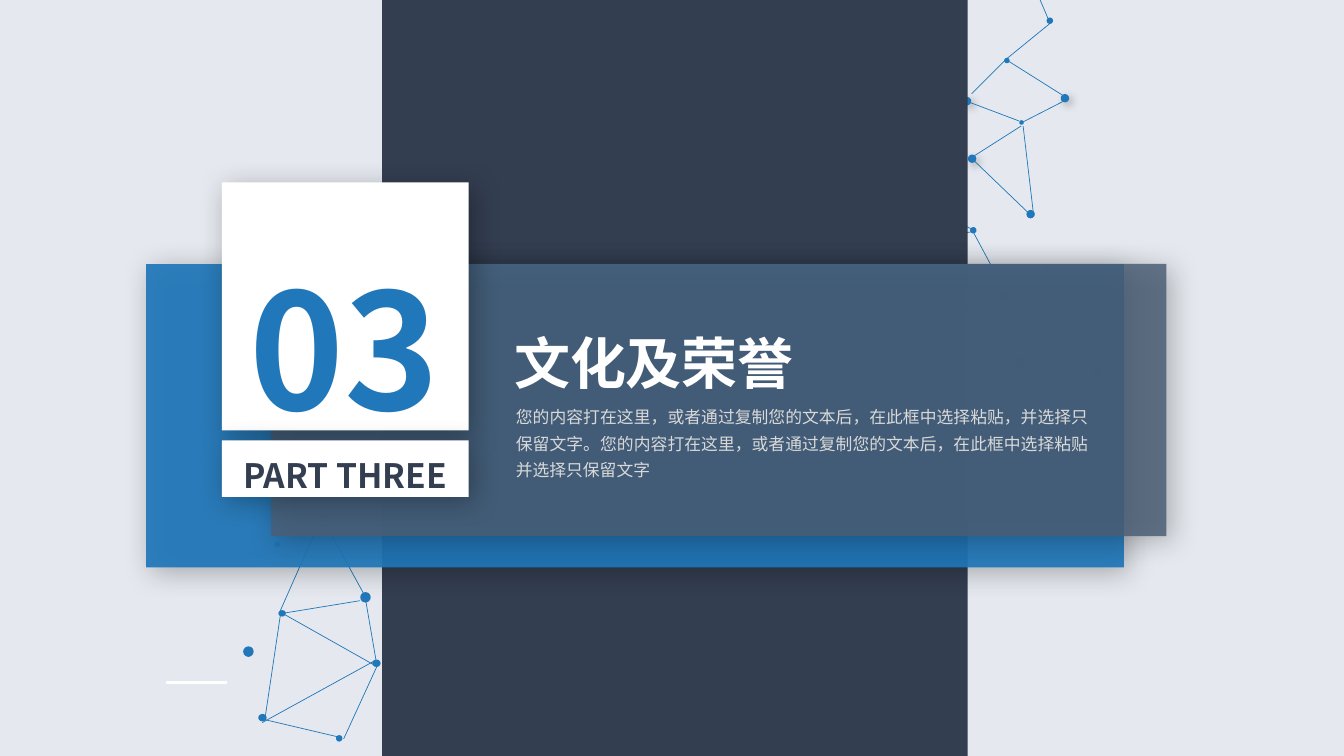
from dataclasses import dataclass

from lxml import etree
from pptx import Presentation
from pptx import util as u
from pptx.dml.color import RGBColor
from pptx.enum import shapes, text
from pptx.oxml.ns import qn


@dataclass
class Theme:
    back: str = "E5E9EF"
    blue: str = "2077B9"
    navy: str = "333E51"
    slate: str = "4B5E75"
    white: str = "FFFFFF"
    pale: str = "D9D9D9"
    font: str = "Noto Sans CJK SC"
    narrow: str = "Arial Narrow"
    huge: int = 115
    head: int = 40
    label: int = 24
    body: int = 12


def write(shape, words, size, color, font=None, bold=False,
          align=text.PP_ALIGN.LEFT, anchor=text.MSO_ANCHOR.TOP,
          fit=text.MSO_AUTO_SIZE.SHAPE_TO_FIT_TEXT):
    frame = shape.text_frame
    frame.word_wrap = True
    frame.auto_size = fit
    frame.vertical_anchor = anchor
    para = frame.paragraphs[0]
    para.alignment = align
    para.line_spacing = 1.3
    run = para.add_run()
    run.text = words
    run.font.name = font or theme.font
    run.font.size = u.Pt(size)
    run.font.bold = bold
    run.font.color.rgb = RGBColor.from_string(color)
    east = etree.SubElement(run.font._element, qn("a:ea"))
    east.set("typeface", theme.font)


def draw(kind, place, color, alpha=None, shade=None, edge=None):
    shape = slide.shapes.add_shape(kind, *map(u.Pt, place))
    shape.fill.solid()
    shape.fill.fore_color.rgb = RGBColor.from_string(color)
    if edge:
        shape.line.color.rgb = RGBColor.from_string(color)
        shape.line.width = u.Pt(edge)
    else:
        shape.line.fill.background()
    shape.shadow.inherit = False
    props = shape._element.spPr
    if alpha:
        tint = props.find(".//" + qn("a:srgbClr"))
        etree.SubElement(tint, qn("a:alpha")).set("val", str(alpha * 1000))
    if shade:
        hue, force, blur, gap = shade
        cast = etree.SubElement(props.find(qn("a:effectLst")), qn("a:outerShdw"),
                                blurRad=str(u.Pt(blur)), dist=str(u.Pt(gap)),
                                dir="2700000", algn="tl", rotWithShape="0")
        tint = etree.SubElement(cast, qn("a:srgbClr"), val=hue)
        etree.SubElement(tint, qn("a:alpha")).set("val", str(force * 1000))
    return shape


theme = Theme()
deck = Presentation()
deck.slide_width, deck.slide_height = u.Pt(960), u.Pt(540)
slide = deck.slides.add_slide(deck.slide_layouts[5])
slide.background.fill.solid()
slide.background.fill.fore_color.rgb = RGBColor.from_string(theme.back)

upper = [
    (720.7, 43.9, 759.6, 68.4), (743, 0, 748.8, 13.7),
    (750.2, 16.6, 719.3, 41.8), (717.8, 43.2, 694.1, 67),
    (693.4, 73.4, 727.9, 86.4), (695.5, 111.6, 729.4, 90),
    (738, 151.2, 730.8, 90), (696.2, 115.2, 734.4, 151.9),
    (730.8, 87.1, 758.9, 72.7), (653.8, 140.4, 693.4, 163.4),
    (695.5, 166.3, 718.6, 209.5), (694.1, 165.6, 617, 177.1),
    (715.7, 213.1, 661, 230.4),
]
lower = [
    (261.4, 429.8, 268.6, 471.6), (245.5, 527.8, 269.3, 475.9),
    (189.4, 512.6, 200.2, 439.9), (187.2, 516.2, 267.1, 472.3),
    (266.4, 474.5, 203.8, 439.2), (241.2, 526.3, 189.4, 514.1),
    (203.8, 437.8, 257, 429.1), (231.8, 373, 261.4, 427),
    (228.2, 373, 200.2, 436.3), (254.2, 335.5, 232.6, 370.8),
    (257.8, 336.2, 281.5, 375.8),
]
accent = [(118.8, 487.4, 162, 487.4)]
for links, color, width in ((upper + lower, theme.blue, 0.5),
                            (accent, theme.white, 2.25)):
    for ends in links:
        link = slide.shapes.add_connector(
            shapes.MSO_CONNECTOR.STRAIGHT, *map(u.Pt, ends))
        link.line.color.rgb = RGBColor.from_string(color)
        link.line.width = u.Pt(width)
        etree.SubElement(link._element.spPr, qn("a:effectLst"))

soft = ("404040", 40, 6, 3)
deep = ("000000", 30, 20, 5)
plain = [
    (748.1, 13, 3.6, 3.6), (733.7, 150.5, 5, 5), (717.8, 41.8, 2.9, 2.9),
    (728.6, 86.4, 2.2, 2.2), (693.4, 162.7, 3.6, 3.6), (714.2, 208.8, 5, 5),
    (725, 255.6, 7.2, 7.2), (781.2, 262.8, 5, 5), (745.2, 190.8, 2.9, 2.9),
    (266.4, 471.6, 5, 4.3), (240.5, 525.6, 3.6, 3.6), (199.4, 436.3, 4.3, 3.6),
    (227.5, 368.6, 5, 4.3), (185, 510.5, 5, 4.3), (257.8, 423.4, 6.5, 6.5),
    (174.2, 462.2, 6.5, 6.5), (196.6, 387.4, 2.9, 2.9),
]
raised = [(688.3, 69.8, 5, 5), (691.9, 110.9, 5, 5), (758.2, 67.7, 5, 5)]
for dots, shade in ((plain, None), (raised, soft)):
    for place in dots:
        draw(shapes.MSO_SHAPE.OVAL, place, theme.blue, shade=shade, edge=1)

rect = shapes.MSO_SHAPE.RECTANGLE
draw(rect, (272.9, 0, 418.3, 540), theme.navy)
draw(rect, (104.4, 188.6, 698.4, 216.7), theme.blue, alpha=93, shade=deep)
draw(rect, (193.7, 188.6, 639.4, 194.4), theme.slate, alpha=84, shade=deep)
draw(rect, (158.4, 130.3, 176.4, 177.1), theme.white, shade=deep)

count = slide.shapes.add_textbox(*map(u.Pt, (140.4, 133.2, 211.7, 186.5)))
write(count, "03", theme.huge, theme.blue, bold=True,
      align=text.PP_ALIGN.CENTER)

title = slide.shapes.title
title.left, title.top, title.width, title.height = map(
    u.Pt, (360, 216.7, 334.8, 69.8))
write(title, "文化及荣誉", theme.head, theme.white, bold=True)
slide.shapes._spTree.append(title._element)

body = slide.shapes.add_textbox(*map(u.Pt, (361.4, 283, 423.4, 63.4)))
write(body, "您的内容打在这里，或者通过复制您的文本后，在此框中选择粘贴，并选择只保留文字。"
      "您的内容打在这里，或者通过复制您的文本后，在此框中选择粘贴并选择只保留文字",
      theme.body, theme.pale, font=theme.narrow, align=text.PP_ALIGN.JUSTIFY)

part = draw(rect, (158.4, 314.6, 176.4, 40.3), theme.white, shade=deep)
write(part, "PART THREE", theme.label, theme.navy, bold=True,
      align=text.PP_ALIGN.CENTER, anchor=text.MSO_ANCHOR.MIDDLE,
      fit=text.MSO_AUTO_SIZE.NONE)

deck.save("out.pptx")
